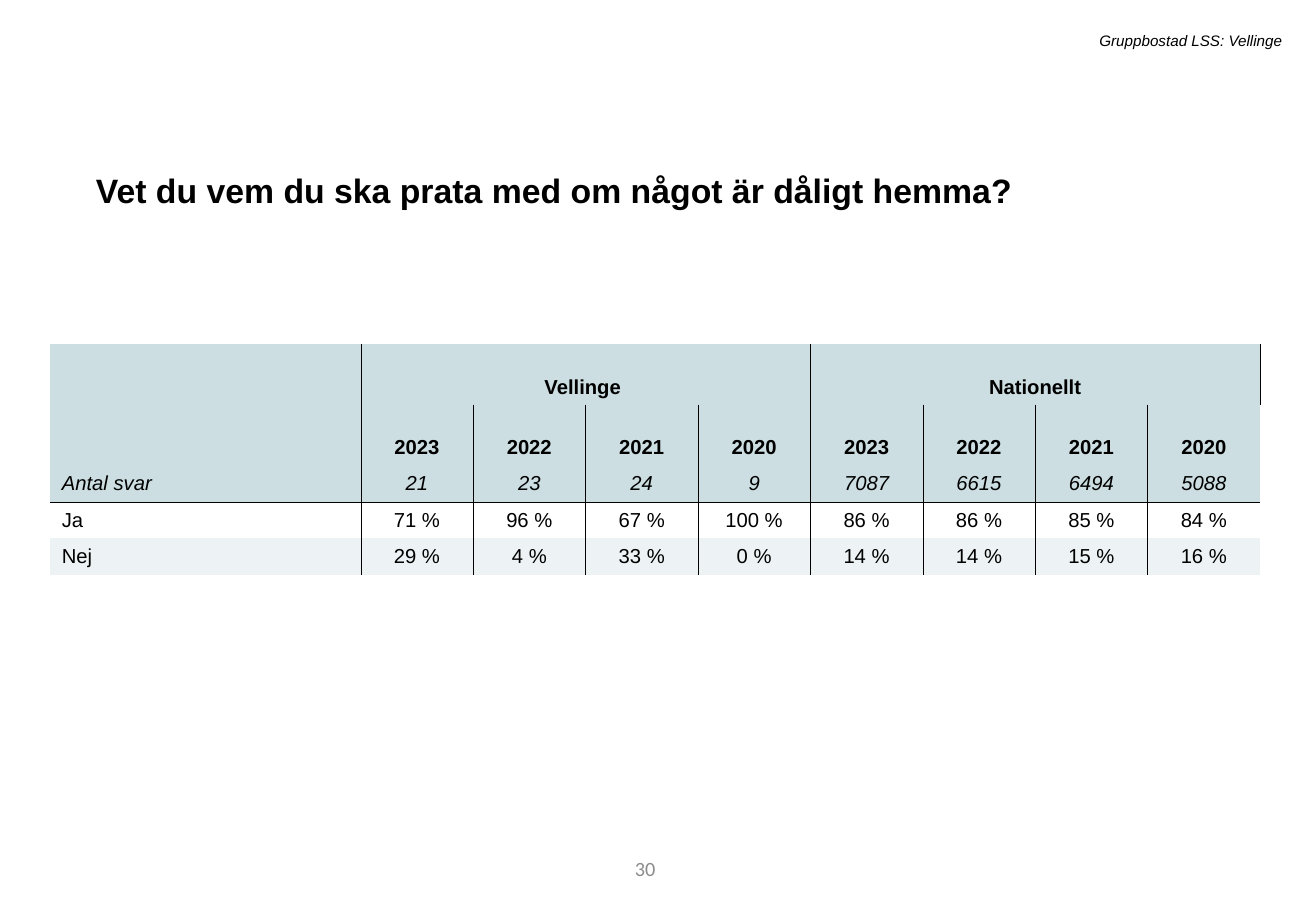
from lxml.etree import SubElement
from pptx import Presentation
from pptx.dml.color import RGBColor
from pptx.enum.text import MSO_ANCHOR as ANCHOR, PP_ALIGN as ALIGN
from pptx.oxml.ns import qn
from pptx.util import Cm, Pt

BLACK = RGBColor(0x00, 0x00, 0x00)
GREY = RGBColor(0x8C, 0x8C, 0x8C)
HEADER_BLUE = RGBColor(0xCC, 0xDE, 0xE1)
BAND_BLUE = RGBColor(0xED, 0xF3, 0xF4)
NO_STYLE = "{2D5ABB26-0587-4C30-8999-92F81FD0307C}"

YEARS = ["2023", "2022", "2021", "2020"]
ROWS = [
    ["", "Vellinge ", "", "", "", "Nationellt", "", "", ""],
    [""] + YEARS * 2,
    ["Antal svar", "21", "23", "24", "9", "7087", "6615", "6494", "5088"],
    ["Ja", "71 %", "96 %", "67 %", "100 %", "86 %", "86 %", "85 %", "84 %"],
    ["Nej", "29 %", "4 %", "33 %", "0 %", "14 %", "14 %", "15 %", "16 %"],
]
ROW_HEIGHTS = [Cm(1.27), Cm(1.27), Cm(0.76), Cm(0.76), Cm(0.76)]
ROW_FILLS = [HEADER_BLUE, HEADER_BLUE, HEADER_BLUE, None, BAND_BLUE]
GROUP_ROW, YEAR_ROW, COUNT_ROW = 0, 1, 2


def write(tf, text, size, align=ALIGN.LEFT, font="Arial", color=BLACK,
          bold=False, italic=False):
    p = tf.paragraphs[0]
    p.alignment = align
    r = p.add_run()
    r.text = text
    r.font.name = font
    r.font.size = Pt(size)
    r.font.bold = bold
    r.font.italic = italic
    r.font.color.rgb = color
    return p


def add_title(s, text):
    sp = s.shapes.title
    sp.left, sp.top, sp.width, sp.height = Cm(1.75), Cm(3.25), Cm(23.88), Cm(1.19)
    sp.text_frame.vertical_anchor = ANCHOR.TOP
    p = write(sp.text_frame, text, 20, bold=True)
    p.line_spacing = 1.2
    p.space_before = Pt(0)


def add_label(s, left, top, width, height, text, size, **style):
    """Add a right-aligned, vertically centred text box."""
    tf = s.shapes.add_textbox(left, top, width, height).text_frame
    tf.word_wrap = True
    tf.vertical_anchor = ANCHOR.MIDDLE
    write(tf, text, size, ALIGN.RIGHT, **style)


def add_border(cell, side):
    """Draw a thin black line on side "R" or "B" of a cell."""
    tc_pr = cell._tc.get_or_add_tcPr()
    ln = SubElement(tc_pr, qn(f"a:ln{side}"), w=str(Pt(0.25)))
    fill = SubElement(ln, qn("a:solidFill"))
    SubElement(fill, qn("a:srgbClr"), val=str(BLACK))


def format_cell(cell, row, col, text):
    if col < len(ROWS[row]) - 1 or row == GROUP_ROW:
        add_border(cell, "R")
    if row == COUNT_ROW:
        add_border(cell, "B")
    if ROW_FILLS[row] is None:
        cell.fill.background()
    else:
        cell.fill.solid()
        cell.fill.fore_color.rgb = ROW_FILLS[row]
    cell.vertical_anchor = ANCHOR.BOTTOM if row <= YEAR_ROW else ANCHOR.MIDDLE
    if text:
        write(cell.text_frame, text, 12, ALIGN.CENTER if col else ALIGN.LEFT,
              bold=row <= YEAR_ROW, italic=row == COUNT_ROW)


def add_answer_table(s):
    frame = s.shapes.add_table(len(ROWS), len(ROWS[0]), Cm(1.04), Cm(7.19),
                               Cm(25.3), sum(ROW_HEIGHTS))
    next(frame._element.iter(qn("a:tableStyleId"))).text = NO_STYLE
    table = frame.table
    table.first_row = table.horz_banding = False
    for col, column in enumerate(table.columns):
        column.width = Cm(2.35) if col else Cm(6.5)
    for row, height in enumerate(ROW_HEIGHTS):
        table.rows[row].height = height
    for first in (1, 1 + len(YEARS)):
        last = first + len(YEARS) - 1
        table.cell(GROUP_ROW, first).merge(table.cell(GROUP_ROW, last))
    for row, texts in enumerate(ROWS):
        for col, text in enumerate(texts):
            format_cell(table.cell(row, col), row, col, text)


def main():
    prs = Presentation()
    prs.slide_width, prs.slide_height = Cm(27.51), Cm(19.05)
    s = prs.slides.add_slide(prs.slide_layouts[5])
    add_label(s, Cm(7.75), Cm(17.65), Cm(6.2), Cm(1.02), "30", 12,
              font="Calibri", color=GREY)
    add_title(s, "Vet du vem du ska prata med om något är dåligt hemma?")
    add_answer_table(s)
    add_label(s, Cm(4.55), Cm(0.53), Cm(22.5), Cm(0.64),
              "Gruppbostad LSS: Vellinge", 9, italic=True)
    prs.save("out.pptx")


if __name__ == "__main__":
    main()
